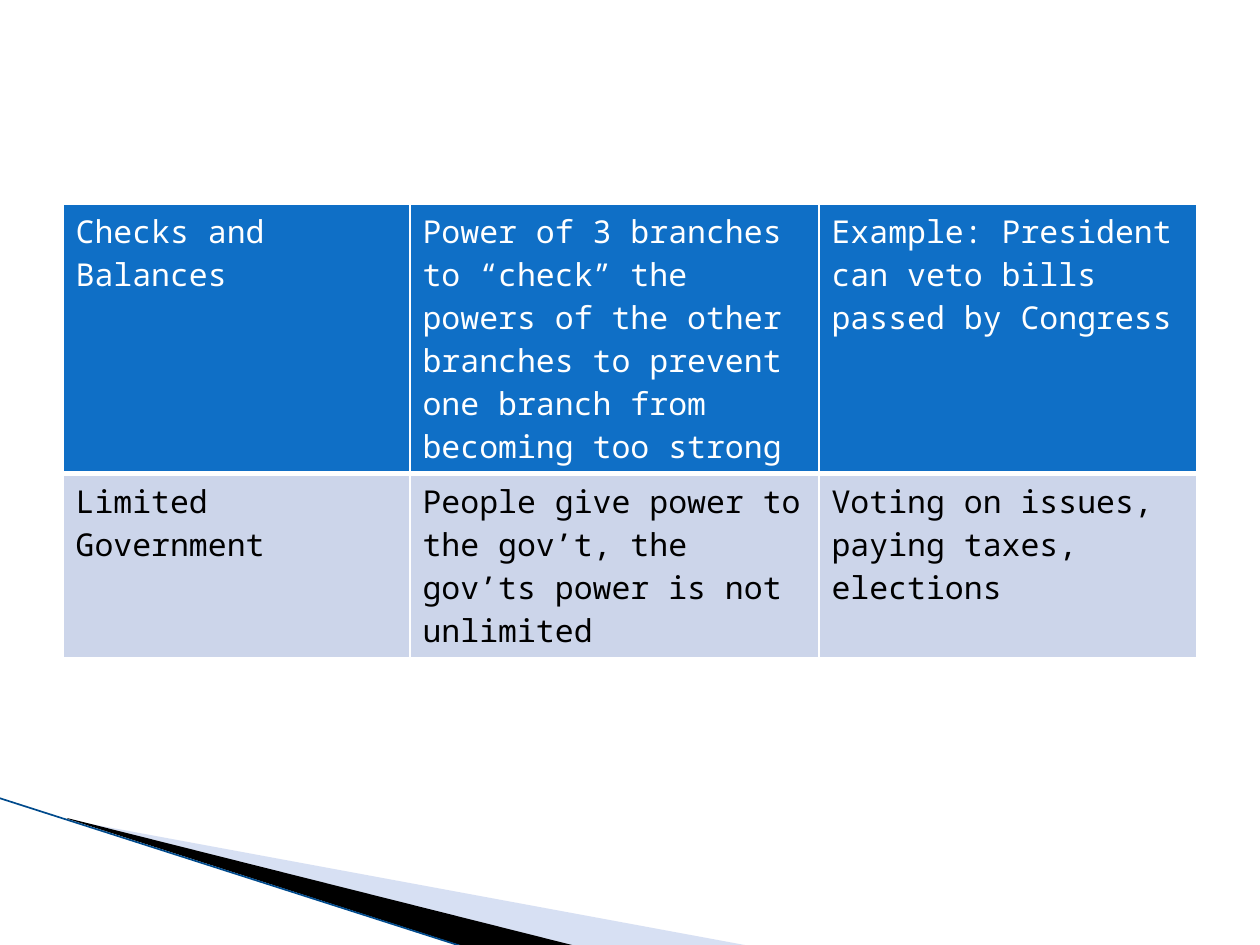
from lxml.etree import SubElement
from pptx import Presentation
from pptx.dml.color import RGBColor
from pptx.enum.shapes import MSO_CONNECTOR
from pptx.oxml.ns import qn
from pptx.util import Emu, Pt

SCALE = 914400 / 126  # EMU per px
COLORS = {
    "white": "FFFFFF",
    "black": "000000",
    "header": "0F6FC6",
    "band": "CCD5EA",
    "light wedge": "9DB2E1",
    "edge": "004A8C",
}


def px(length):
    return Emu(round(length * SCALE))


def color(name):
    return RGBColor.from_string(COLORS[name])


deck = Presentation()
deck.slide_width, deck.slide_height = px(1260), px(945)
page = deck.slides.add_slide(deck.slide_layouts[6])

# Wedges in the lower left corner: fill, opacity in percent, corners
wedges = [
    ("light wedge", 40, [(69, 820), (750, 946), (575, 946), (69, 819)]),
    ("black", 100, [(67, 818), (576, 946), (469, 948), (68, 819)]),
]
for fill, opacity, corners in wedges:
    builder = page.shapes.build_freeform(*corners[0], scale=SCALE)
    builder.add_line_segments(corners[1:], close=True)
    wedge = builder.convert_to_shape()
    wedge.shadow.inherit = False
    wedge.fill.solid()
    wedge.fill.fore_color.rgb = color(fill)
    wedge.line.fill.background()
    if opacity < 100:
        fill_color = wedge._element.spPr.find(qn("a:solidFill"))[0]
        SubElement(fill_color, qn("a:alpha"), val=str(opacity * 1000))

# Thin edge along the wedges
edge = page.shapes.add_connector(
    MSO_CONNECTOR.STRAIGHT, px(-1), px(798), px(467), px(948))
edge.line.color.rgb = color("edge")
edge.line.width = Pt(0.95)
SubElement(edge._element.spPr, qn("a:effectLst"))

# Table of principles
rows = [
    ["Checks and Balances",
     "Power of 3 branches to “check” the powers of the other branches "
     "to prevent one branch from becoming too strong",
     "Example: President can veto bills passed by Congress"],
    ["Limited Government",
     "People give power to the gov’t, the gov’ts power is not unlimited",
     "Voting on issues, paying taxes, elections"],
]
# Fill, text colour and border widths in points for each row
row_styles = [
    ("header", "white", {"lnL": 1, "lnR": 1, "lnT": 1, "lnB": 3}),
    ("band", "black", {"lnL": 1, "lnR": 1, "lnT": 3, "lnB": 1}),
]
frame = page.shapes.add_table(2, 3, px(63), px(204), px(1134), px(328))
table = frame.table
for column, width in zip(table.columns, [347, 409, 378]):
    column.width = px(width)

for row, texts, (fill, ink, borders) in zip(table.rows, rows, row_styles):
    row.height = px(52)  # grows with its text
    for cell, text in zip(row.cells, texts):
        properties = cell._tc.get_or_add_tcPr()
        for side, width in borders.items():
            border = SubElement(properties, qn(f"a:{side}"), w=str(Pt(width)))
            solid = SubElement(border, qn("a:solidFill"))
            SubElement(solid, qn("a:srgbClr"), val=COLORS["white"])
        cell.fill.solid()
        cell.fill.fore_color.rgb = color(fill)
        span = cell.text_frame.paragraphs[0].add_run()
        span.text = text
        font_format = {"name": "Noto Sans Mono", "size": Pt(18), "bold": False}
        for attribute, value in font_format.items():
            setattr(span.font, attribute, value)
        span.font.color.rgb = color(ink)
frame.height = px(328)

deck.save("out.pptx")
